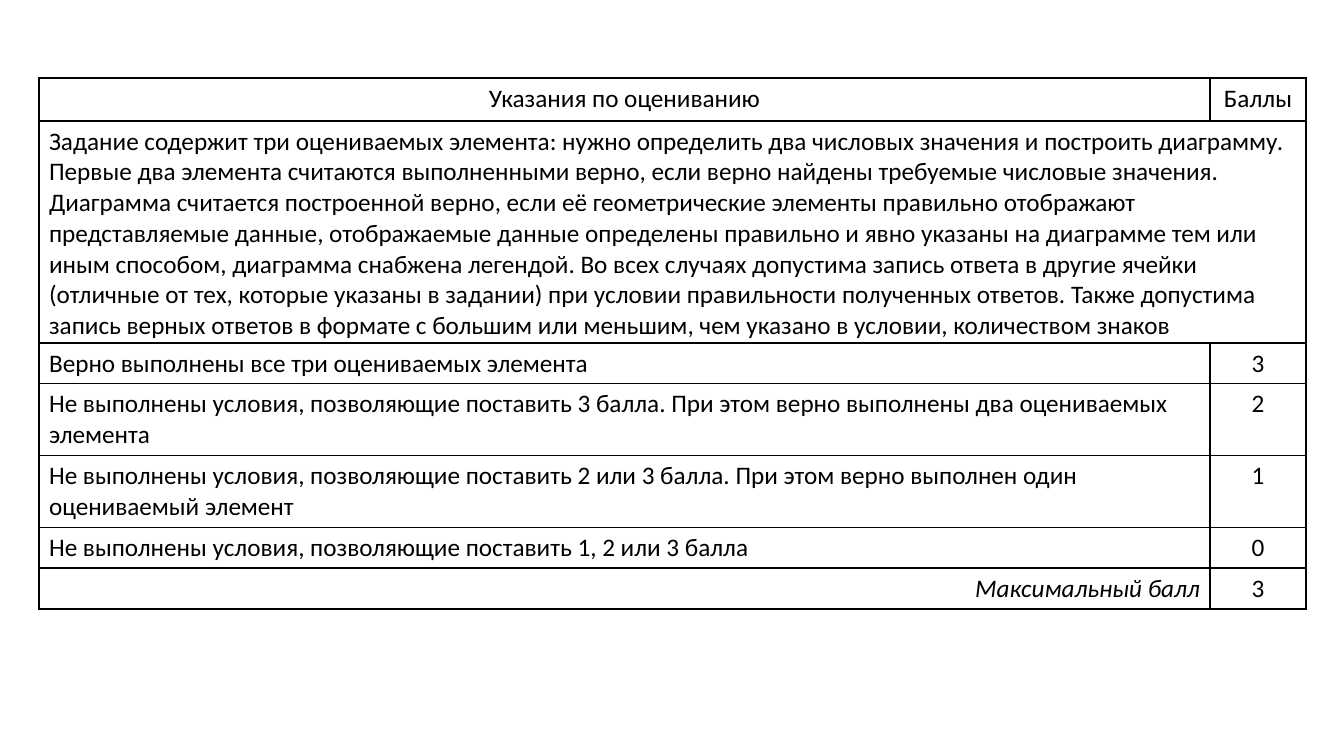
from lxml import etree
from pptx import Presentation
from pptx.dml.color import RGBColor
from pptx.enum.text import PP_ALIGN
from pptx.oxml.ns import qn
from pptx.util import Pt

PX = 914400 / 100.8
LEFT, CENTER, RIGHT = PP_ALIGN.LEFT, PP_ALIGN.CENTER, PP_ALIGN.RIGHT
COLORS = {"text": "000000", "border": "000000"}
BORDER_WIDTH = Pt(1)


def px(length):
    return round(length * PX)


def add_borders(cell):
    properties = cell._tc.get_or_add_tcPr()
    for index, side in enumerate(("lnL", "lnR", "lnT", "lnB")):
        border = etree.Element(qn(f"a:{side}"), w=str(BORDER_WIDTH))
        fill = etree.SubElement(border, qn("a:solidFill"))
        etree.SubElement(fill, qn("a:srgbClr"), val=COLORS["border"])
        properties.insert(index, border)


# Criterion paragraphs, their alignment, points, row height
criteria = [
    (["Указания по оцениванию"], CENTER, "Баллы", 43),
    (["Задание содержит три оцениваемых элемента: нужно определить два числовых "
      "значения и построить диаграмму. Первые два элемента считаются выполненными "
      "верно, если верно найдены требуемые числовые значения.",
      "Диаграмма считается построенной верно, если её геометрические элементы "
      "правильно отображают представляемые данные, отображаемые данные определены "
      "правильно и явно указаны на диаграмме тем или иным способом, диаграмма "
      "снабжена легендой. Во всех случаях допустима запись ответа в другие ячейки "
      "(отличные от тех, которые указаны в задании) при условии правильности "
      "полученных ответов. Также допустима запись верных ответов в формате с "
      "большим или меньшим, чем указано в условии, количеством знаков"],
     LEFT, None, 222),
    (["Верно выполнены все три оцениваемых элемента"], LEFT, "3", 40),
    (["Не выполнены условия, позволяющие поставить 3 балла. При этом верно "
      "выполнены два оцениваемых элемента"], LEFT, "2", 70),
    (["Не выполнены условия, позволяющие поставить 2 или 3 балла. При этом верно "
      "выполнен один оцениваемый элемент"], LEFT, "1", 71),
    (["Не выполнены условия, позволяющие поставить 1, 2 или 3 балла"], LEFT, "0", 40),
    (["Максимальный балл"], RIGHT, "3", 41),
]
column_widths = [1171, 96]

presentation = Presentation()
presentation.slide_width, presentation.slide_height = px(1344), px(756)
slide = presentation.slides.add_slide(presentation.slide_layouts[6])

rubric = slide.shapes.add_table(
    len(criteria), len(column_widths), px(39), px(78),
    px(sum(column_widths)), px(sum(row[-1] for row in criteria))).table
rubric.first_row = rubric.horz_banding = False
for column, width in zip(rubric.columns, column_widths):
    column.width = px(width)

for row, (criterion, alignment, points, height) in enumerate(criteria):
    rubric.rows[row].height = px(height)
    contents = [(criterion, alignment), ([points] if points else [], CENTER)]
    for column, (paragraphs, align) in enumerate(contents):
        cell = rubric.cell(row, column)
        cell.fill.background()
        add_borders(cell)
        for index, text in enumerate(paragraphs):
            frame = cell.text_frame
            paragraph = frame.add_paragraph() if index else frame.paragraphs[0]
            paragraph.alignment = align
            run = paragraph.add_run()
            run.text = text
            run.font.name, run.font.size = "Calibri", Pt(18)
            run.font.bold = False
            run.font.italic = align == RIGHT
            run.font.color.rgb = RGBColor.from_string(COLORS["text"])
    if points is None:
        rubric.cell(row, 0).merge(rubric.cell(row, 1))
        rubric.cell(row, 0).margin_bottom = 0

presentation.save("out.pptx")
